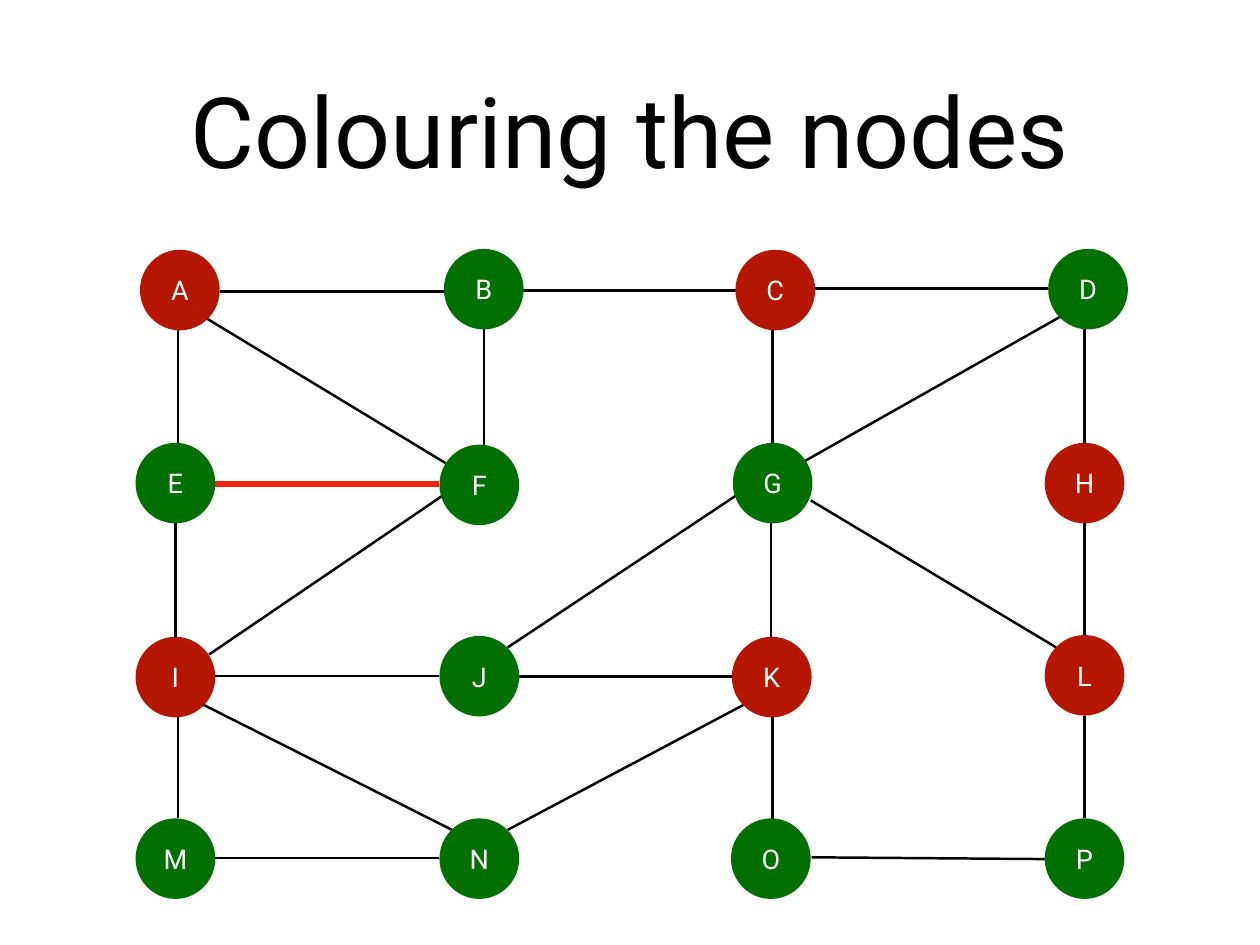
from lxml.etree import SubElement
from pptx import Presentation
from pptx.dml.color import RGBColor
from pptx.enum.shapes import MSO_CONNECTOR as Connector, MSO_SHAPE as Shape
from pptx.enum.text import MSO_ANCHOR as Anchor, PP_ALIGN as Align
from pptx.oxml.ns import qn
from pptx.util import Inches, Pt

TITLE = "Colouring the nodes"
NODE_ROWS = ["ABCD", "EFGH", "IJKL", "MNOP"]
RED_NODES = "ACHIKL"

COLUMN_LEFTS = [1.53, 4.96, 8.26, 11.79]
ROW_TOPS = [2.82, 5, 7.19, 9.24]
TOP_ROW_SHIFT = 0.05
NODE_SIZE = (0.9, 0.91)
# Small offsets from the grid: right, down
NUDGES = {
    "B": (0, -0.01), "C": (-0.01, 0), "D": (-0.01, -0.01),
    "F": (0, 0.02), "G": (0.01, 0), "J": (0, -0.01),
    "L": (0, -0.02), "O": (-0.01, 0),
}

# Start x, start y, end x, end y
HORIZONTAL_EDGES = [
    (2.48, 3.29, 5.01, 3.29),
    (5.89, 3.28, 8.33, 3.28),
    (9.2, 3.26, 11.83, 3.26),
    (2.43, 7.63, 4.96, 7.63),
    (5.84, 7.64, 8.28, 7.64),
    (2.43, 9.69, 4.96, 9.69),
    (9.16, 9.68, 11.8, 9.7),
]
VERTICAL_EDGES = [
    (2.01, 3.71, 2.01, 5.02),
    (1.98, 5.9, 1.98, 7.21),
    (2.01, 8.09, 2.01, 9.24),
    (5.46, 3.71, 5.46, 5.02),
    (8.72, 3.7, 8.72, 5.01),
    (8.7, 5.89, 8.7, 7.2),
    (8.72, 8.09, 8.72, 9.25),
    (12.24, 3.71, 12.24, 5.02),
    (12.24, 5.9, 12.24, 7.21),
    (12.24, 8.09, 12.24, 9.24),
]
DIAGONAL_EDGES = [
    (2.34, 3.6, 5.03, 5.23),
    (4.99, 5.6, 2.36, 7.39),
    (8.3, 5.6, 5.73, 7.31),
    (9.15, 5.65, 11.92, 7.31),
    (11.96, 3.58, 9.04, 5.23),
    (8.39, 7.96, 5.73, 9.37),
    (2.3, 7.96, 5.1, 9.37),
]
CONFLICT_EDGE = (2.43, 5.47, 4.96, 5.47)

BLACK, WHITE, RED, GREEN, BRIGHT_RED = "000000", "FFFFFF", "B51600", "027001", "EE230C"
INSET = Inches(0.06)
FRAME_FORMAT = {
    "word_wrap": True, "vertical_anchor": Anchor.MIDDLE,
    "margin_left": INSET, "margin_right": INSET,
    "margin_top": INSET, "margin_bottom": INSET,
}


def rgb(value):
    return RGBColor.from_string(value)


def write_text(shape, text, size, color):
    frame = shape.text_frame
    for name, value in FRAME_FORMAT.items():
        setattr(frame, name, value)
    paragraph = frame.paragraphs[0]
    paragraph.text = text
    paragraph.alignment = Align.CENTER
    font = paragraph.runs[0].font
    for name, value in {"name": "Roboto", "size": Pt(size)}.items():
        setattr(font, name, value)
    font.color.rgb = rgb(color)


def add_edge(slide, ends, color=BLACK, width=2):
    edge = slide.shapes.add_connector(Connector.STRAIGHT, *map(Inches, ends))
    edge.line.color.rgb = rgb(color)
    edge.line.width = Pt(width)
    SubElement(edge._element.spPr, qn("a:effectLst"))


def add_node(slide, letter, left, top):
    node = slide.shapes.add_shape(
        Shape.OVAL, *map(Inches, (left, top, *NODE_SIZE)))
    node.shadow.inherit = False
    node.fill.solid()
    node.fill.fore_color.rgb = rgb(RED if letter in RED_NODES else GREEN)
    node.line.fill.background()
    write_text(node, letter, 22, WHITE)


def main():
    presentation = Presentation()
    presentation.slide_width = Inches(14.22)
    presentation.slide_height = Inches(10.67)
    slide = presentation.slides.add_slide(presentation.slide_layouts[6])

    title = slide.shapes.add_textbox(*map(Inches, (1.04, 0.28, 12.14, 2.36)))
    write_text(title, TITLE, 80, BLACK)

    for ends in HORIZONTAL_EDGES + VERTICAL_EDGES + DIAGONAL_EDGES:
        add_edge(slide, ends)
    for row, (letters, top) in enumerate(zip(NODE_ROWS, ROW_TOPS)):
        shift = TOP_ROW_SHIFT if row == 0 else 0
        for letter, left in zip(letters, COLUMN_LEFTS):
            right, down = NUDGES.get(letter, (0, 0))
            add_node(slide, letter, left + shift + right, top + down)
    add_edge(slide, CONFLICT_EDGE, BRIGHT_RED, 5)

    presentation.save("out.pptx")


if __name__ == "__main__":
    main()
